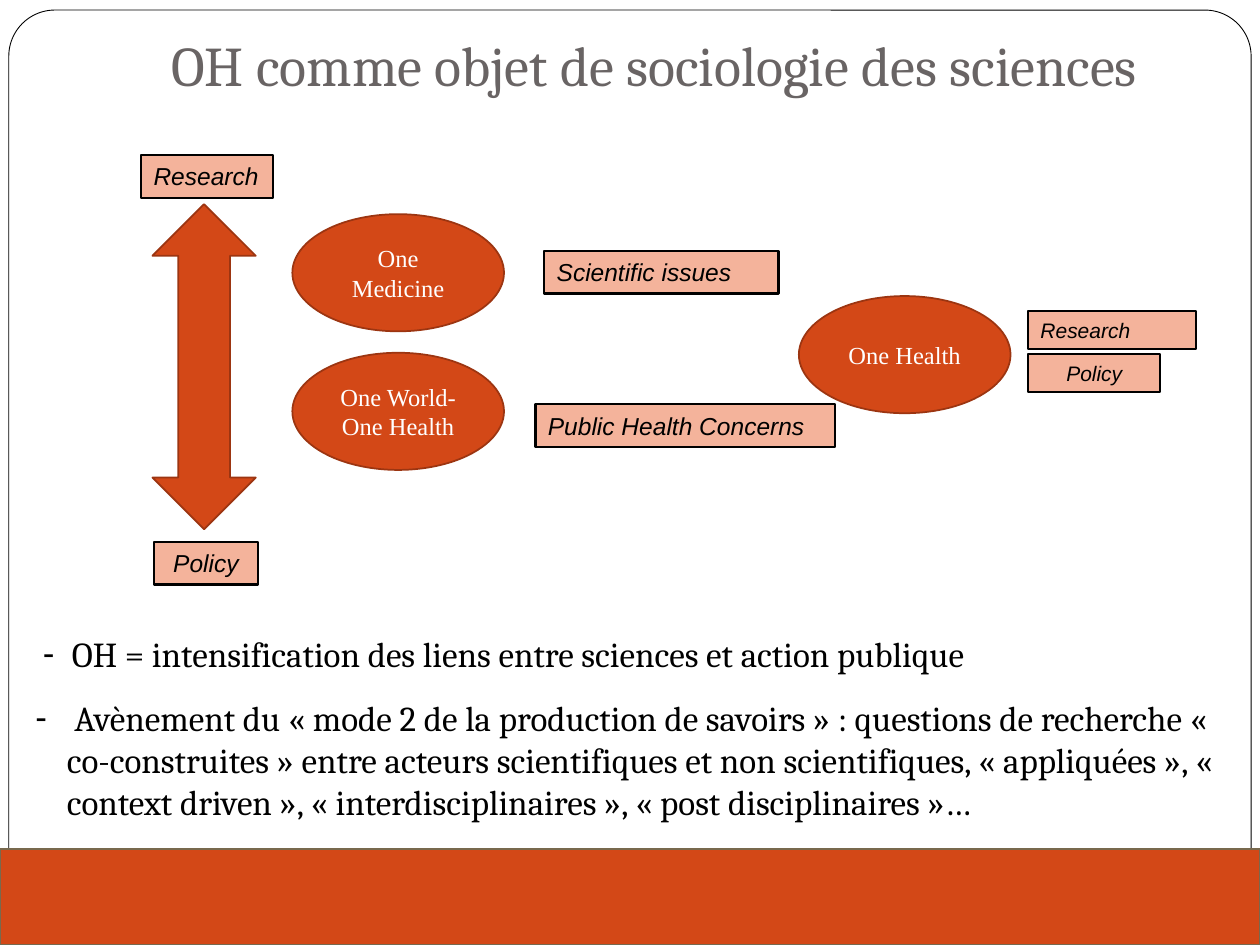
from lxml import etree
from pptx import Presentation
from pptx.dml.color import RGBColor
from pptx.enum.shapes import MSO_SHAPE as Shape
from pptx.enum.text import MSO_ANCHOR as Anchor, MSO_AUTO_SIZE as Auto, PP_ALIGN as Align
from pptx.oxml.ns import qn
from pptx.util import Inches, Pt

ORANGE = RGBColor(0xD3, 0x48, 0x17)
RUST = RGBColor(0x9C, 0x35, 0x11)
PEACH = RGBColor(0xF4, 0xB3, 0x9B)
OLIVE = RGBColor(0x78, 0x69, 0x4E)
GREY = RGBColor(0x69, 0x64, 0x64)
BLACK = RGBColor(0, 0, 0)
WHITE = RGBColor(255, 255, 255)


def put(slide, kind, box, fill, line, width):
    shape = slide.shapes.add_shape(kind, *map(Inches, box))
    shape.shadow.inherit = False
    shape.fill.solid()
    shape.fill.fore_color.rgb = fill
    shape.line.color.rgb = line
    shape.line.width = Pt(width)
    return shape


def write(shape, text, font, size, color, align, anchor, italic=False):
    frame = shape.text_frame
    frame.text = text
    frame.word_wrap = True
    frame.auto_size = Auto.NONE
    frame.vertical_anchor = anchor
    para = frame.paragraphs[0]
    para.alignment = align
    para.space_before = Pt(0)
    style = para.runs[0].font
    style.name, style.size, style.italic = font, Pt(size), italic
    style.color.rgb = color
    return para


def place(holder, box):
    holder.left, holder.top, holder.width, holder.height = map(Inches, box)


def add_frame(slide, box):
    frame = put(slide, Shape.ROUNDED_RECTANGLE, box, WHITE, BLACK, 0.5)
    frame.adjustments[0] = 0.05
    # Send behind the placeholders
    slide.shapes._spTree.insert(2, frame._element)


def add_title(slide, box):
    title = slide.shapes.title
    place(title, box)
    write(title, "OH comme objet de sociologie des sciences",
          "Cambria", 32, GREY, Align.CENTER, Anchor.MIDDLE)


def add_oval(slide, left, top, text):
    oval = put(slide, Shape.OVAL, (left, top, 1.68, 0.93), ORANGE, RUST, 1)
    write(oval, text, "Times New Roman", 14, WHITE, Align.CENTER, Anchor.MIDDLE)


def add_label(slide, box, text, size=14, align=Align.LEFT):
    label = put(slide, Shape.RECTANGLE, box, PEACH, BLACK, 1.25)
    write(label, text, "Arial", size, BLACK, align, Anchor.TOP, True)


def add_scale(slide, left, top):
    """Arrow between the two poles, research and policy."""
    put(slide, Shape.UP_DOWN_ARROW, (left + 0.09, top + 0.39, 0.82, 2.58),
        ORANGE, RUST, 1)
    add_label(slide, (left, top, 1.05, 0.34), "Research")
    add_label(slide, (left + 0.1, top + 3.07, 0.83, 0.34), "Policy",
              align=Align.CENTER)


def add_flow(slide, left, top):
    """Two movements that meet in One Health."""
    add_oval(slide, left, top, "One Medicine")
    add_oval(slide, left, top + 1.1, "One World-One Health")
    add_oval(slide, left + 4.02, top + 0.65, "One Health")
    add_label(slide, (left + 2, top + 0.29, 1.86, 0.34), "Scientific issues")
    add_label(slide, (left + 1.93, top + 1.51, 2.38, 0.34),
              "Public Health Concerns")
    side = left + 5.84
    add_label(slide, (side, top + 0.77, 1.33, 0.3), "Research", 12)
    add_label(slide, (side, top + 1.11, 1.05, 0.3), "Policy", 12, Align.CENTER)


def add_point(holder, box, text, indent):
    place(holder, box)
    para = write(holder, text, "Cambria", 20, BLACK, Align.LEFT, Anchor.TOP)
    # Dash bullet with a hanging indent
    props = para._p.get_or_add_pPr()
    props.set("marL", str(Inches(indent)))
    props.set("indent", str(-Inches(indent)))
    etree.SubElement(props, qn("a:buChar")).set("char", "-")


def main():
    deck = Presentation()
    deck.slide_width, deck.slide_height = Inches(10), Inches(7.5)
    slide = deck.slides.add_slide(deck.slide_layouts[3])
    first, second = list(slide.placeholders)[1:]

    # Background and title
    add_frame(slide, (0.07, 0.08, 9.86, 7.32))
    put(slide, Shape.RECTANGLE, (0, 6.74, 10, 0.76), ORANGE, OLIVE, 1)
    add_title(slide, (0.43, 0.15, 9.53, 0.71))

    # Diagram
    add_scale(slide, 1.12, 1.23)
    add_flow(slide, 2.32, 1.7)

    # Conclusions
    add_point(first, (0.24, 4.97, 9.88, 0.44),
              "OH = intensification des liens entre sciences et action publique",
              0.23)
    add_point(second, (0.18, 5.48, 9.8, 1.11),
              " Avènement du « mode 2 de la production de savoirs » : questions "
              "de recherche « co-construites » entre acteurs scientifiques et "
              "non scientifiques, « appliquées », « context driven », "
              "« interdisciplinaires », « post disciplinaires »…", 0.25)
    deck.save("out.pptx")


if __name__ == "__main__":
    main()
